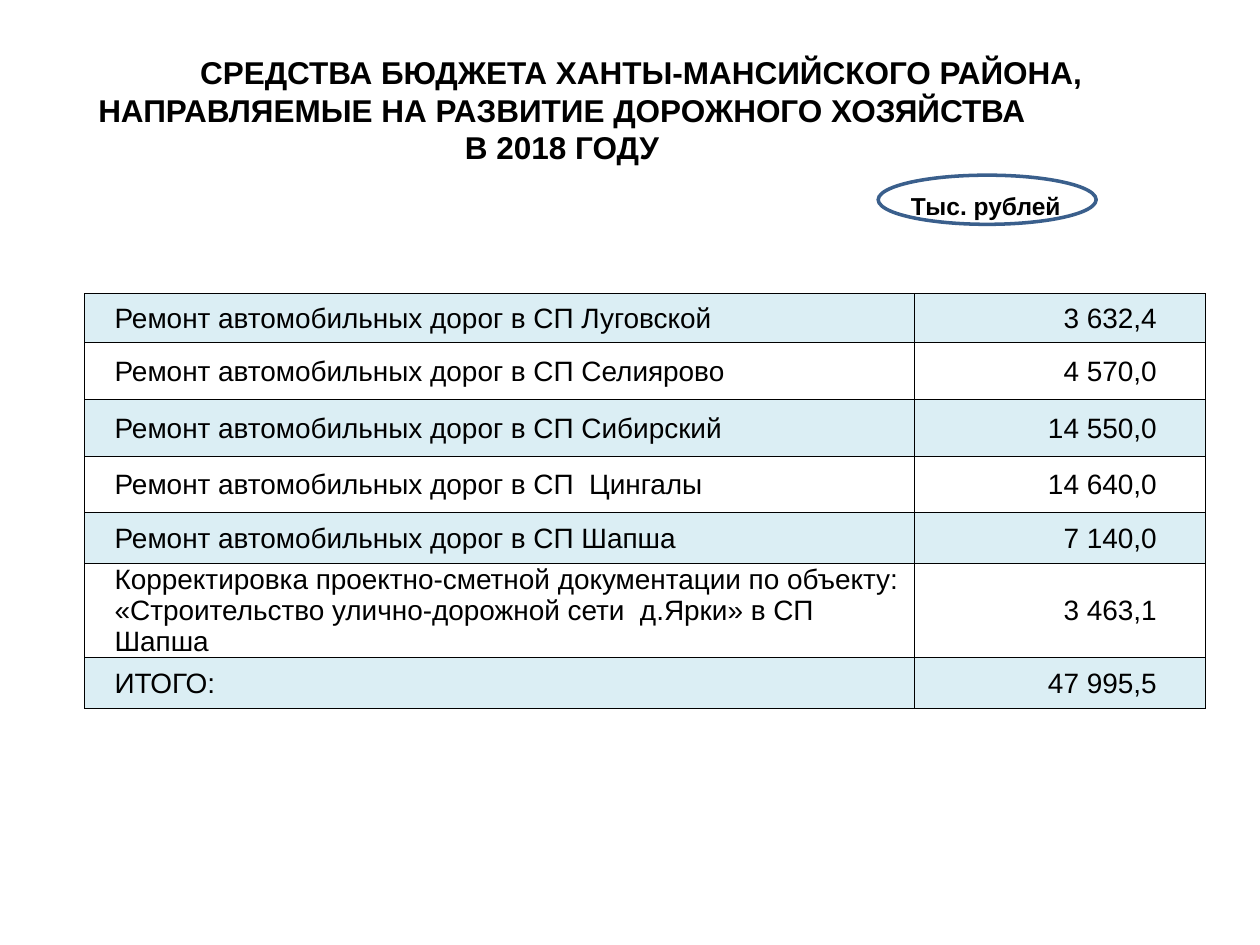
import pptx
import pptx.dml.color
import pptx.enum.shapes
import pptx.enum.text
import pptx.oxml
import pptx.oxml.ns
import pptx.util
from pptx.util import Inches

COLORS = {"text": "000000", "border": "000000", "band": "DBEEF4", "ellipse": "3A5F8C"}
FONT = "Arial"
ALIGN = pptx.enum.text.PP_ALIGN
MIDDLE = pptx.enum.text.MSO_ANCHOR.MIDDLE

TITLE_LINES = [
    "СРЕДСТВА БЮДЖЕТА ХАНТЫ-МАНСИЙСКОГО РАЙОНА,",
    "НАПРАВЛЯЕМЫЕ НА РАЗВИТИЕ ДОРОЖНОГО ХОЗЯЙСТВА",
    "В 2018 ГОДУ",
]
# Work, amount, row height in inches
BUDGET_ROWS = [
    ("Ремонт автомобильных дорог в СП Луговской", "3 632,4", 0.39),
    ("Ремонт автомобильных дорог в СП Селиярово", "4 570,0", 0.45),
    ("Ремонт автомобильных дорог в СП Сибирский", "14 550,0", 0.45),
    ("Ремонт автомобильных дорог в СП  Цингалы", "14 640,0", 0.45),
    ("Ремонт автомобильных дорог в СП Шапша", "7 140,0", 0.4),
    ("Корректировка проектно-сметной документации по объекту: "
     "«Строительство улично-дорожной сети  д.Ярки» в СП Шапша", "3 463,1", 0.75),
    ("ИТОГО:", "47 995,5", 0.4),
]


def color(name):
    return pptx.dml.color.RGBColor.from_string(COLORS[name])


def add_run(paragraph, text, size, bold=False):
    run = paragraph.add_run()
    run.text = text
    run.font.name = FONT
    run.font.size = pptx.util.Pt(size)
    run.font.bold = bold
    run.font.color.rgb = color("text")


def fill_title(title, left, top, width, height):
    title.left, title.top, title.width, title.height = left, top, width, height
    frame = title.text_frame
    frame.auto_size = pptx.enum.text.MSO_AUTO_SIZE.NONE
    frame.vertical_anchor = MIDDLE
    for index, line in enumerate(TITLE_LINES):
        paragraph = frame.add_paragraph() if index else frame.paragraphs[0]
        paragraph.alignment = ALIGN.CENTER
        paragraph.space_before = pptx.util.Pt(0)
        add_run(paragraph, line, 18, bold=True)
    # The middle line is centred in a narrower column
    frame.paragraphs[1]._p.get_or_add_pPr().set("marR", str(Inches(1.26)))


def add_unit_label(slide, left, top, width, height):
    ellipse = slide.shapes.add_shape(
        pptx.enum.shapes.MSO_SHAPE.OVAL, left, top, width, height)
    ellipse.shadow.inherit = False
    ellipse.fill.background()
    ellipse.line.color.rgb = color("ellipse")
    ellipse.line.width = pptx.util.Pt(2)

    label = slide.shapes.add_textbox(
        left + Inches(0.16), top + Inches(0.08), Inches(1.65), Inches(0.34))
    label.text_frame.word_wrap = True
    add_run(label.text_frame.paragraphs[0], "Тыс. рублей", 14, bold=True)


def add_borders(cell):
    """Draw a thin line on all four sides; called before the cell's fill is set."""
    properties = cell._tc.get_or_add_tcPr()
    for side in ("lnL", "lnR", "lnT", "lnB"):
        properties.append(pptx.oxml.parse_xml(
            f'<a:{side} {pptx.oxml.ns.nsdecls("a")} w="{pptx.util.Pt(0.5)}">'
            f'<a:solidFill><a:srgbClr val="{COLORS["border"]}"/></a:solidFill></a:{side}>'))


def format_cell(cell, text, alignment, margin_left, margin_right, banded):
    cell.margin_left, cell.margin_right = margin_left, margin_right
    cell.margin_top, cell.margin_bottom = Inches(0.01), 0
    cell.vertical_anchor = MIDDLE
    add_borders(cell)
    if banded:
        cell.fill.solid()
        cell.fill.fore_color.rgb = color("band")
    else:
        cell.fill.background()
    paragraph = cell.text_frame.paragraphs[0]
    paragraph.alignment = alignment
    add_run(paragraph, text, 16)


def add_budget_table(slide, left, top, width, amount_width):
    height = Inches(sum(row[2] for row in BUDGET_ROWS))
    table = slide.shapes.add_table(
        len(BUDGET_ROWS), 2, left, top, width, height).table
    table.first_row = table.horz_banding = False
    table.columns[0].width = width - amount_width
    table.columns[1].width = amount_width
    for index, (work, amount, row_height) in enumerate(BUDGET_ROWS):
        table.rows[index].height = Inches(row_height)
        banded = index % 2 == 0
        format_cell(table.cell(index, 0), work, ALIGN.LEFT,
                    Inches(0.24), Inches(0.12), banded)
        format_cell(table.cell(index, 1), amount, ALIGN.RIGHT,
                    Inches(0.01), Inches(0.39), banded)


def main():
    presentation = pptx.Presentation()
    presentation.slide_width, presentation.slide_height = Inches(10), Inches(7.5)
    slide = presentation.slides.add_slide(
        presentation.slide_layouts.get_by_name("Title Only"))
    fill_title(slide.shapes.title, Inches(0.59), Inches(0.36), Inches(9), Inches(1.02))
    add_budget_table(slide, Inches(0.67), Inches(2.33), Inches(8.9), Inches(2.31))
    add_unit_label(slide, Inches(6.97), Inches(1.39), Inches(1.73), Inches(0.39))
    presentation.save("out.pptx")


if __name__ == "__main__":
    main()
